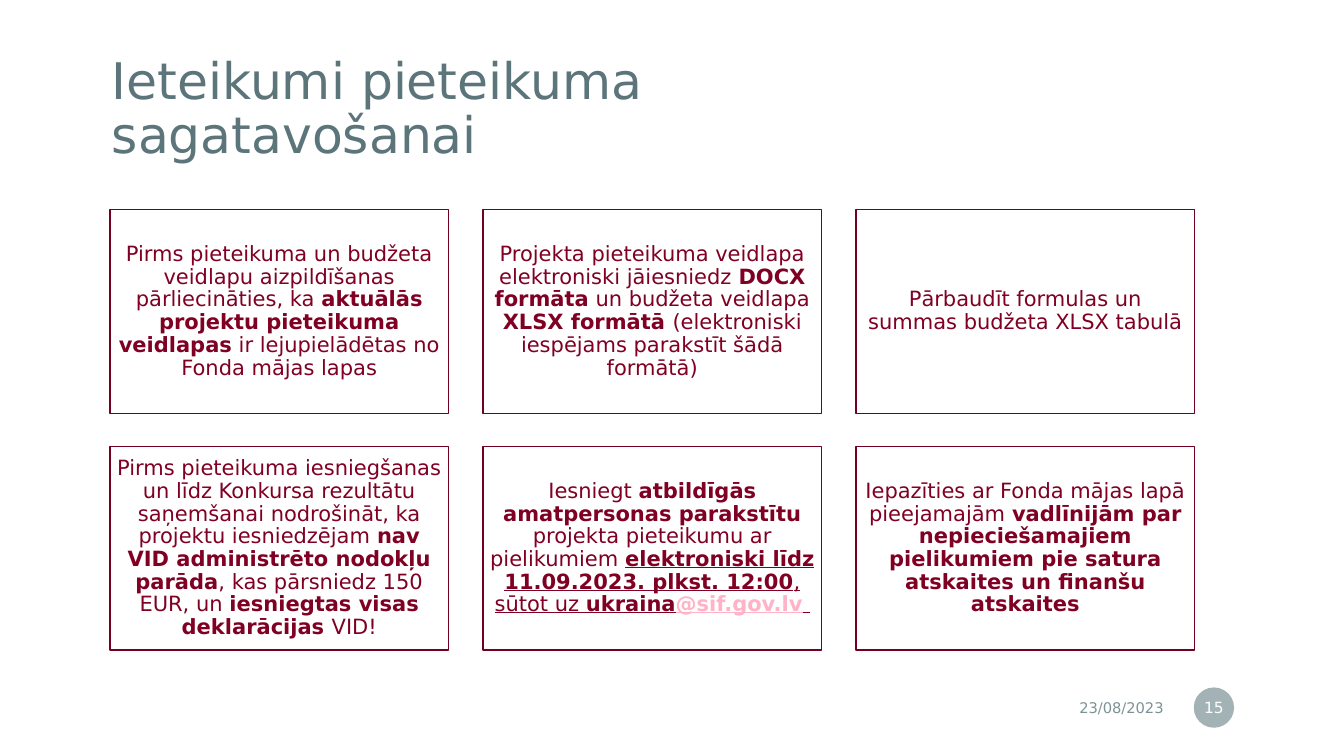
from lxml import etree
from pptx import Presentation
from pptx import util as u
from pptx.dml.color import RGBColor
from pptx.enum import shapes, text
from pptx.oxml.ns import qn

PX = 9144  # 100 px to the inch
FONT = "DejaVu Sans"
HUES = {
    "title": "5B757A",
    "muted": "7C9396",
    "white": "FFFFFF",
    "edge": "740021",
    "ink": "800024",
    "link": "FFB2C8",
}

# Card texts as runs: (words, style), b = bold, u = underlined, l = link colour
CARDS = [
    [("Pirms pieteikuma un budžeta veidlapu aizpildīšanas pārliecināties, ka ", ""),
     ("aktuālās projektu pieteikuma veidlapas", "b"),
     (" ir lejupielādētas no Fonda mājas lapas", "")],
    [("Projekta pieteikuma veidlapa elektroniski jāiesniedz ", ""),
     ("DOCX formāta", "b"),
     (" un budžeta veidlapa ", ""),
     ("XLSX formātā ", "b"),
     ("(elektroniski iespējams parakstīt šādā formātā)", "")],
    [("Pārbaudīt formulas un summas budžeta XLSX tabulā", "")],
    [("Pirms pieteikuma iesniegšanas un līdz Konkursa rezultātu saņemšanai "
      "nodrošināt, ka projektu iesniedzējam ", ""),
     ("nav VID administrēto nodokļu parāda", "b"),
     (", kas pārsniedz 150 EUR, un ", ""),
     ("iesniegtas visas deklarācijas ", "b"),
     ("VID!", "")],
    [("Iesniegt ", ""),
     ("atbildīgās amatpersonas parakstītu ", "b"),
     ("projekta pieteikumu ar pielikumiem ", ""),
     ("elektroniski līdz 11.09.2023. plkst. 12:00", "bu"),
     (", sūtot uz ", "u"),
     ("ukraina", "bu"),
     ("@sif.gov.lv", "bul"),
     (" ", "bu")],
    [("Iepazīties ar Fonda mājas lapā pieejamajām ", ""),
     ("vadlīnijām par nepieciešamajiem pielikumiem pie satura atskaites "
      "un finanšu atskaites", "b")],
]


def tint(hue):
    return RGBColor.from_string(HUES[hue])


def place(*box):
    return [u.Emu(n * PX) for n in box]


def style(font, size, hue):
    font.name = FONT
    font.size = u.Pt(size)
    font.color.rgb = tint(hue)


def frame(shape, side, top):
    body = shape.text_frame
    body.word_wrap = True
    body.auto_size = text.MSO_AUTO_SIZE.NONE
    body.vertical_anchor = text.MSO_ANCHOR.MIDDLE
    body.margin_left = body.margin_right = u.Emu(side * PX)
    body.margin_top = body.margin_bottom = u.Emu(top * PX)
    return body


def label(shape, words, size, hue, align, side, top):
    body = frame(shape, side, top)
    body.text = words
    para = body.paragraphs[0]
    para.alignment = align
    style(para.runs[0].font, size, hue)
    return para


def head(slide, words):
    title = slide.shapes.title
    title.left, title.top, title.width, title.height = place(91, 48, 873, 123)
    para = label(title, words, 36, "title", text.PP_ALIGN.LEFT, 20, 20)
    para.line_spacing = 0.9


def solid(slide, kind, box, hue):
    shape = slide.shapes.add_shape(kind, *place(*box))
    shape.shadow.inherit = False
    shape.fill.solid()
    shape.fill.fore_color.rgb = tint(hue)
    return shape


def card(slide, box, runs):
    shape = solid(slide, shapes.MSO_SHAPE.RECTANGLE, box, "white")
    shape.line.color.rgb = tint("edge")
    shape.line.width = u.Pt(1)
    para = frame(shape, 6, 6).paragraphs[0]
    para.alignment = text.PP_ALIGN.CENTER
    para.line_spacing = 0.9
    for words, marks in runs:
        run = para.add_run()
        run.text = words
        style(run.font, 15, "link" if "l" in marks else "ink")
        run.font.bold = "b" in marks
        run.font.underline = "u" in marks


def date(slide, words):
    box = slide.shapes.add_textbox(*place(863, 684, 301, 35))
    label(box, words, 10.5, "muted", text.PP_ALIGN.RIGHT, 10, 5)


def badge(slide, words):
    disc = solid(slide, shapes.MSO_SHAPE.OVAL, (1184, 682, 40, 40), "muted")
    disc.line.fill.background()
    # 70 % opaque fill
    color = disc.fill._xPr.find(qn("a:solidFill"))[0]
    etree.SubElement(color, qn("a:alpha")).set("val", "70000")
    label(disc, words, 11, "white", text.PP_ALIGN.CENTER, 2, 5)


def main():
    deck = Presentation()
    deck.slide_width, deck.slide_height = place(1333, 750)
    slide = deck.slides.add_slide(deck.slide_layouts[5])

    # Title and footer
    head(slide, "Ieteikumi pieteikuma sagatavošanai")
    date(slide, "23/08/2023")
    badge(slide, "15")

    # Grid of cards, three to a row
    for i, runs in enumerate(CARDS):
        row, col = divmod(i, 3)
        card(slide, (109 + col * 370, 208 + row * 235, 336, 202), runs)

    deck.save("out.pptx")


if __name__ == "__main__":
    main()
